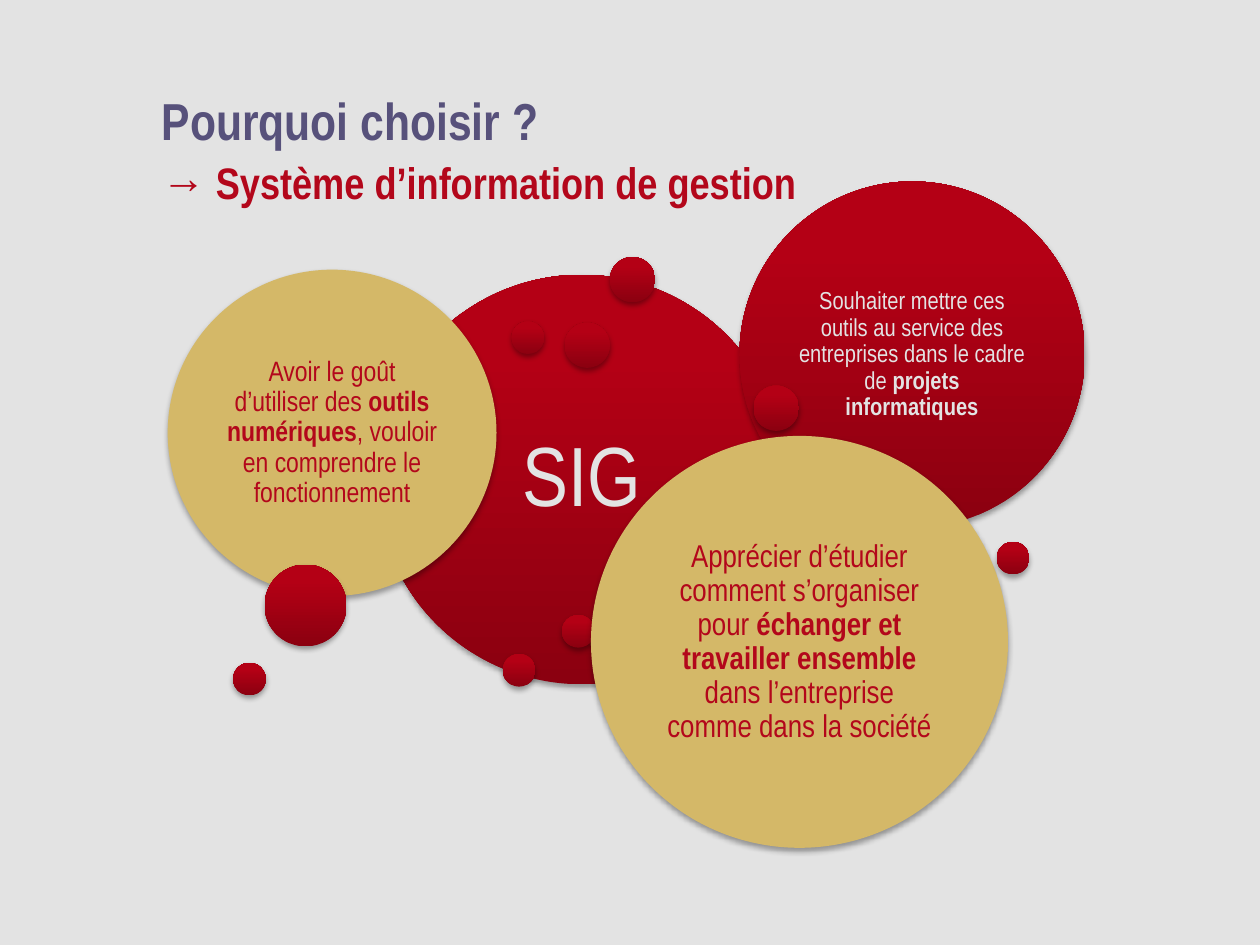
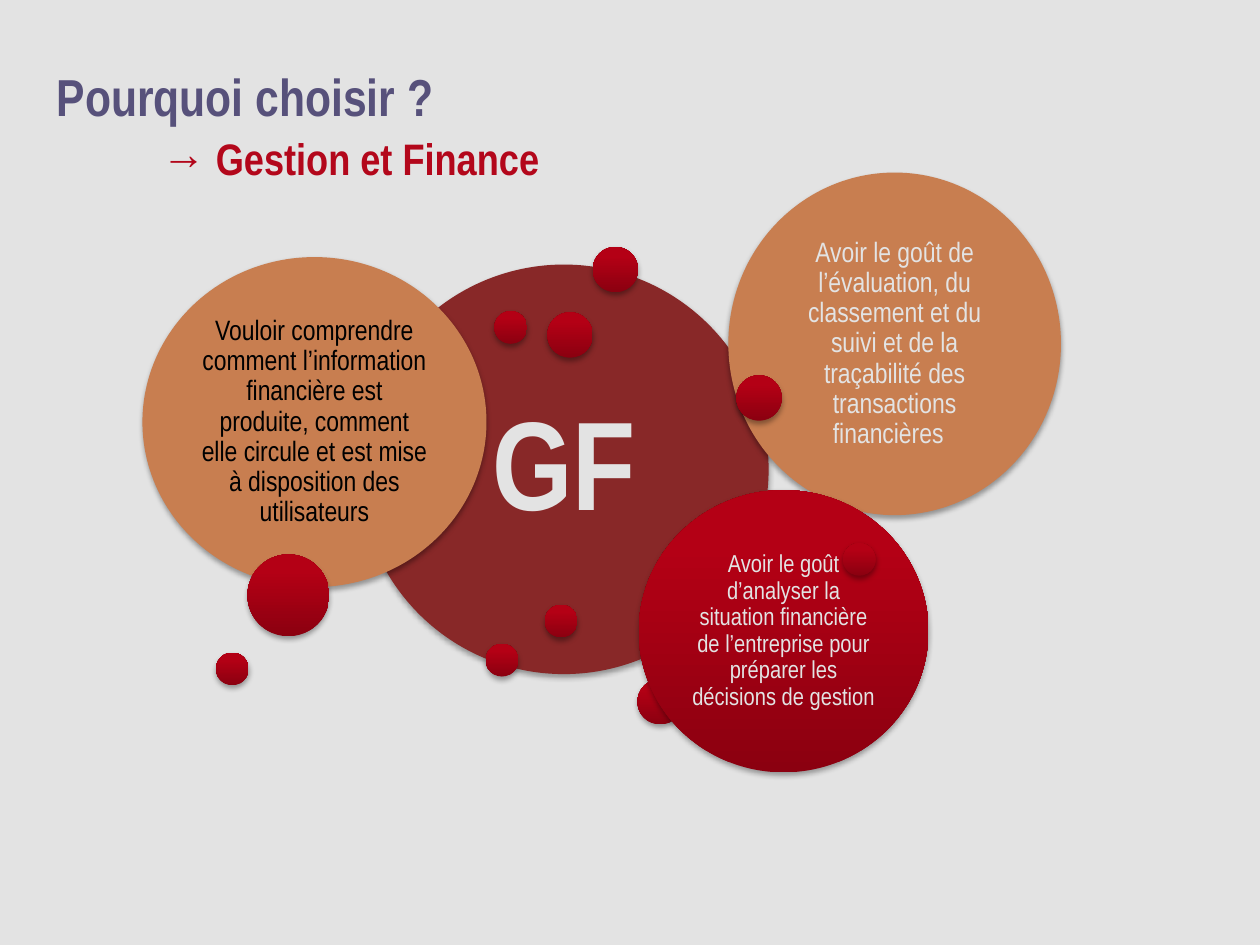
from lxml import etree
from pptx import Presentation
from pptx.dml.color import RGBColor
from pptx.enum.shapes import MSO_SHAPE as Preset
from pptx.enum.text import MSO_ANCHOR as Anchor, MSO_AUTO_SIZE as AutoSize, PP_ALIGN as Align
from pptx.oxml import parse_xml
from pptx.oxml.ns import nsdecls, qn
from pptx.util import Pt

COLORS = {
    "background": "E3E3E3",
    "light": "E3E3E3",
    "title": "57517B",
    "red": "B3071B",
    "black": "000000",
    "gold": "D4B868",
    "copper": "C87E50",
    "brown": "882828",
    "gradient_dark": "8B0010",
    "gradient_light": "B40015",
}
FONT = "Arial Narrow"
SMALL, MEDIUM, LARGE = 18.7, 25.9, 46.8
TITLE_INDENT = 60
SHARED_DOTS = [
    (348.5, 146.9, MEDIUM),
    (287.3, 373.7, SMALL),
    (292.3, 183.6, SMALL),
    (322.6, 184.3, MEDIUM),
    (151.2, 322.6, LARGE),
    (430.6, 220.3, MEDIUM),
    (133.2, 378.7, SMALL),
    (321.1, 351.4, SMALL),
]
SLIDES = [
    {
        "subtitle": "→ Système d’information de gestion",
        "title_box": (54.7, 62.6),
        "title_margin": TITLE_INDENT,
        "title_bottom": 0,
        "circles": [
            ((215.3, 157, 234, 234), "gradient", "SIG",
             {"size": 48, "color": "light"}, 14.4),
            ((95.8, 154.1, 187.9, 186.5), "gold",
             "Avoir le goût d’utiliser des *outils numériques*, vouloir en comprendre le fonctionnement",
             {"size": 16, "color": "red"}, 5),
            ((422.6, 103.7, 197.3, 198), "gradient",
             "Souhaiter mettre ces outils au service des entreprises dans le cadre de *projets informatiques*",
             {"size": 14, "color": "light"}, 4.3),
            ((337.7, 249.1, 238.3, 235.4), "gold",
             "Apprécier d’étudier comment s’organiser pour *échanger et travailler ensemble *"
             "dans l’entreprise comme dans la société",
             {"size": 18, "color": "red"}, 5),
        ],
        "dot_shift": (0, 0),
        "back_dots": [],
        "front_dot": (569.5, 309.6, SMALL),
    },
    {
        "subtitle": "→ Gestion et Finance",
        "title_box": (60.5, 56.9),
        "title_margin": 0,
        "title_bottom": 33,
        "circles": [
            ((205.2, 151.2, 234, 234), "brown", "GF",
             {"size": 72, "color": "light", "bold": True}, 21.6),
            ((81.4, 146.9, 196.6, 188.6), "copper",
             "Vouloir comprendre comment l’information financière est produite, "
             "comment elle circule et est mise à disposition des utilisateurs",
             {"size": 16, "color": "black"}, 5),
            ((416.2, 98.6, 190.1, 195.8), "copper",
             "Avoir le goût de l’évaluation, du classement et du suivi "
             "et de la traçabilité des transactions financières  ",
             {"size": 16, "color": "light"}, 5),
            ((365, 280.1, 165.6, 161.3), "gradient",
             "Avoir le goût d’analyser la situation financière de l’entreprise "
             "pour préparer les décisions de gestion",
             {"size": 14, "color": "light"}, 4.3),
        ],
        "dot_shift": (-9.8, -5.8),
        "back_dots": [(364.3, 388.1, MEDIUM)],
        "front_dot": (481.7, 310.3, SMALL),
    },
]


def write(paragraph, text, size, color, bold=False, align=Align.CENTER, spacing=0.9):
    paragraph.alignment = align
    paragraph.line_spacing = spacing
    paragraph.space_before = paragraph.space_after = Pt(0)
    for index, piece in enumerate(text.split("*")):
        if piece:
            run = paragraph.add_run()
            run.text = piece
            run.font.name = FONT
            run.font.size = Pt(size)
            run.font.bold = bold or index % 2 == 1
            run.font.color.rgb = RGBColor.from_string(COLORS[color])


def add_circle(slide, box, fill="gradient"):
    shape = slide.shapes.add_shape(Preset.OVAL, *[Pt(length) for length in box])
    if fill == "gradient":
        shape.fill.gradient()
        shape.fill.gradient_angle = 90
        dark, light = shape.fill.gradient_stops
        dark.color.rgb = RGBColor.from_string(COLORS["gradient_dark"])
        light.color.rgb = RGBColor.from_string(COLORS["gradient_light"])
        dark.position, light.position = 0, 0.8
    else:
        shape.fill.solid()
        shape.fill.fore_color.rgb = RGBColor.from_string(COLORS[fill])
    shape.line.fill.background()
    shape.shadow.inherit = False
    shadow = parse_xml(
        f'<a:outerShdw {nsdecls("a")} blurRad="{Pt(3.1)}" dist="{Pt(1.8)}" '
        'dir="5400000" rotWithShape="0"/>')
    color = etree.SubElement(shadow, qn("a:srgbClr"), val=COLORS["black"])
    etree.SubElement(color, qn("a:alpha"), val="35000")
    shape._element.spPr.find(qn("a:effectLst")).append(shadow)
    return shape


presentation = Presentation()
presentation.slide_width, presentation.slide_height = Pt(720), Pt(540)

for content in SLIDES:
    slide = presentation.slides.add_slide(presentation.slide_layouts[5])
    slide.background.fill.solid()
    slide.background.fill.fore_color.rgb = RGBColor.from_string(COLORS["background"])

    title = slide.shapes.title
    top, height = content["title_box"]
    title.left, title.top, title.width, title.height = Pt(25.2), Pt(top), Pt(694.8), Pt(height)
    frame = title.text_frame
    frame.auto_size = AutoSize.NONE
    frame.word_wrap = True
    frame.vertical_anchor = Anchor.MIDDLE
    frame.margin_left = frame.margin_right = Pt(7.2)
    frame.margin_top, frame.margin_bottom = Pt(0), Pt(content["title_bottom"])
    heading, subheading = frame.paragraphs[0], frame.add_paragraph()
    for paragraph, margin in ((heading, content["title_margin"]), (subheading, TITLE_INDENT)):
        properties = paragraph._p.get_or_add_pPr()
        properties.set("marL", str(Pt(margin)))
        properties.set("indent", "0")
    title_format = {"bold": True, "align": Align.LEFT, "spacing": Pt(33)}
    write(heading, "Pourquoi choisir ?", size=29.7, color="title", **title_format)
    write(subheading, content["subtitle"], size=25.2, color="red", **title_format)

    shift_x, shift_y = content["dot_shift"]
    dots = content["back_dots"] + [(x + shift_x, y + shift_y, size) for x, y, size in SHARED_DOTS]
    for position, (box, fill, text, text_format, inset) in enumerate(content["circles"]):
        if position == 3:
            for x, y, size in dots:
                add_circle(slide, (x, y, size, size))
        frame = add_circle(slide, box, fill).text_frame
        frame.word_wrap = True
        frame.vertical_anchor = Anchor.MIDDLE
        frame.margin_left = frame.margin_right = Pt(inset)
        frame.margin_top = frame.margin_bottom = Pt(inset)
        write(frame.paragraphs[0], text, **text_format)
    x, y, size = content["front_dot"]
    add_circle(slide, (x, y, size, size))

presentation.save("out.pptx")
